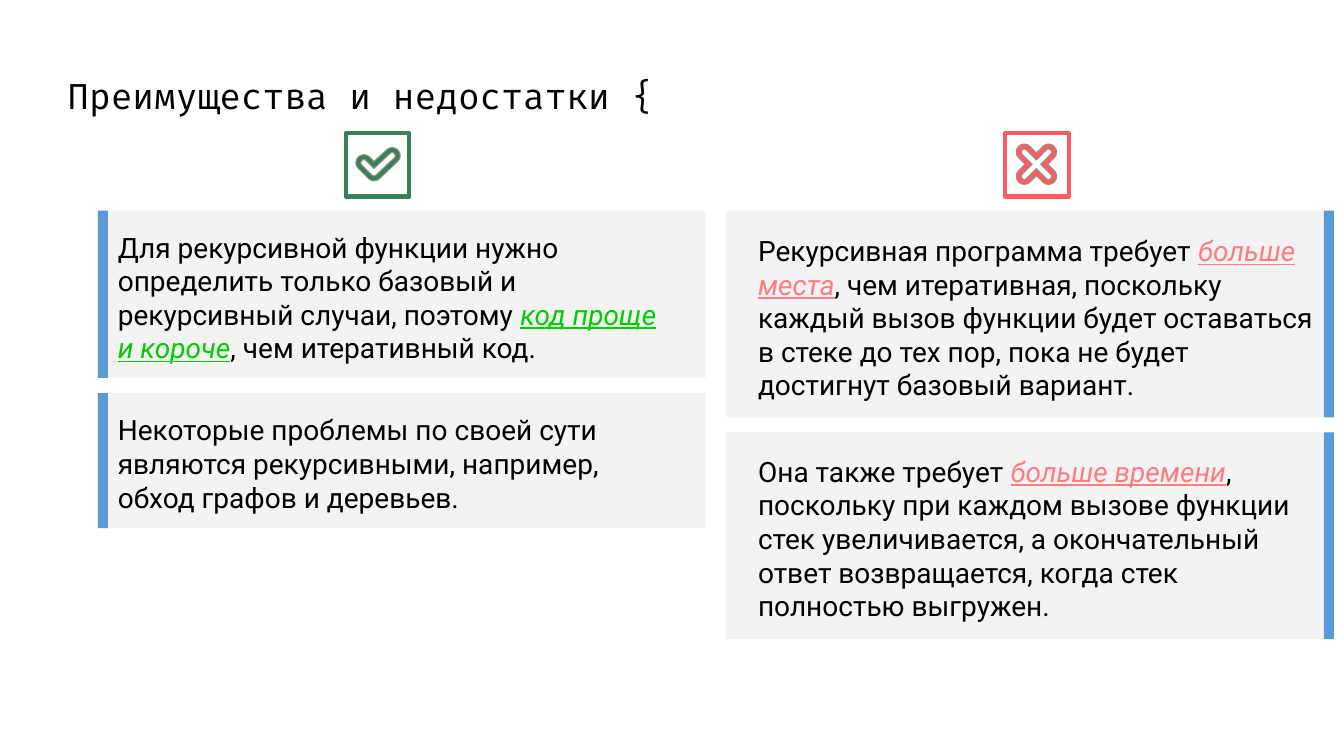
import math
from pptx import Presentation
from pptx import util as u
from pptx.dml.color import RGBColor
from pptx.enum import shapes, text

COLORS = {
    "black": "000000", "panel": "F3F3F3", "accent": "5B9BD5",
    "check": "398059", "cross": "FF5C5C", "outline": "949494",
    "pro": "00CC00", "con": "FF7C80",
}


def add_rect(left, top, width, height, fill=None, line=None):
    rect = slide.shapes.add_shape(
        shapes.MSO_SHAPE.RECTANGLE,
        u.Inches(left), u.Inches(top), u.Inches(width), u.Inches(height))
    rect.shadow.inherit = False
    if fill:
        rect.fill.solid()
        rect.fill.fore_color.rgb = RGBColor.from_string(COLORS[fill])
    else:
        rect.fill.background()
    if line:
        rect.line.color.rgb = RGBColor.from_string(COLORS[line])
        rect.line.width = u.Pt(3)
    else:
        rect.line.fill.background()


def add_text(left, top, width, height, pieces, font, size, emphasis=None):
    frame = slide.shapes.add_textbox(
        u.Inches(left), u.Inches(top), u.Inches(width), u.Inches(height)).text_frame
    frame.word_wrap = True
    frame.vertical_anchor = text.MSO_ANCHOR.MIDDLE
    paragraph = frame.paragraphs[0]
    for index, piece in enumerate(pieces):
        run = paragraph.add_run()
        run.text = piece
        run.font.name = font
        run.font.size = u.Pt(size)
        emphasized = index == 1
        run.font.color.rgb = RGBColor.from_string(COLORS[emphasis if emphasized else "black"])
        if emphasized:
            run.font.italic = True
            run.font.underline = True
    return paragraph


presentation = Presentation()
presentation.slide_width = u.Inches(13.33)
presentation.slide_height = u.Inches(7.5)
slide = presentation.slides.add_slide(presentation.slide_layouts[6])

title = add_text(0.57, 0.73, 12.53, 0.49, ["Преимущества и недостатки {"], "Fira Code", 25.2)
title.line_spacing = 0.9

# Each corner: centre x, centre y, first angle, last angle, radius factor
notch = math.sqrt(2)
check_corners = [
    (3.61, 1.615, 135, 315, 1), (3.71, 1.715, 270, 270, notch),
    (3.89, 1.545, 225, 405, 1), (3.71, 1.715, 45, 135, 1),
]
cross_corners = []
for facing in (45, 135, 225, 315):
    x = 10.28 + math.copysign(0.12, math.cos(math.radians(facing)))
    y = 1.63 + math.copysign(0.12, math.sin(math.radians(facing)))
    cross_corners += [(x, y, facing - 90, facing + 90, 1),
                      (10.28, 1.63, facing + 45, facing + 45, notch)]

for frame_left, color, corners in [(3.43, "check", check_corners), (9.97, "cross", cross_corners)]:
    add_rect(frame_left, 1.32, 0.63, 0.63, line=color)
    contours = []
    for radius in (0.08, 0.03):
        contour = []
        for x, y, first, last, factor in corners:
            for angle in range(first, last + 1, 15):
                turn = math.radians(angle)
                contour.append((u.Inches(x + radius * factor * math.cos(turn)),
                                u.Inches(y + radius * factor * math.sin(turn))))
        contours.append(contour)
    outer, inner = contours
    inner.reverse()
    builder = slide.shapes.build_freeform(*outer[0])
    builder.add_line_segments(outer[1:], close=True)
    builder.move_to(*inner[0])
    builder.add_line_segments(inner[1:], close=True)
    mark = builder.convert_to_shape()
    mark.shadow.inherit = False
    mark.fill.solid()
    mark.fill.fore_color.rgb = RGBColor.from_string(COLORS[color])
    mark.line.color.rgb = RGBColor.from_string(COLORS["outline"])
    mark.line.width = u.Pt(0.75)

cards = [
    (0.97, 2.09, 1.66, 0.97, 1.07, 2.55, 0.8, "pro", [
        "Для рекурсивной функции нужно определить только базовый и рекурсивный случаи, поэтому ",
        "код проще и короче", ", чем итеративный код."]),
    (0.97, 3.9, 1.34, 0.97, 1.07, 4.27, 0.65, "pro", [
        "Некоторые проблемы по своей сути являются рекурсивными, например, обход графов и деревьев."]),
    (7.2, 2.09, 2.05, 13.13, 7.42, 2.25, 1.8, "con", [
        "Рекурсивная программа требует ", "больше места",
        ", чем итеративная, поскольку каждый вызов функции будет оставаться в стеке до тех пор, "
        "пока не будет достигнут базовый вариант."]),
    (7.2, 4.29, 2.05, 13.13, 7.42, 4.44, 1.8, "con", [
        "Она также требует ", "больше времени",
        ", поскольку при каждом вызове функции стек увеличивается, а окончательный ответ "
        "возвращается, когда стек полностью выгружен."]),
]
for left, top, height, bar_left, text_left, text_top, text_height, emphasis, pieces in cards:
    add_rect(left, top, 6.03, height, fill="panel")
    add_rect(bar_left, top, 0.1, height, fill="accent")
    add_text(text_left, text_top, 5.71, text_height, pieces, "Roboto", 20, emphasis)

presentation.save("out.pptx")
